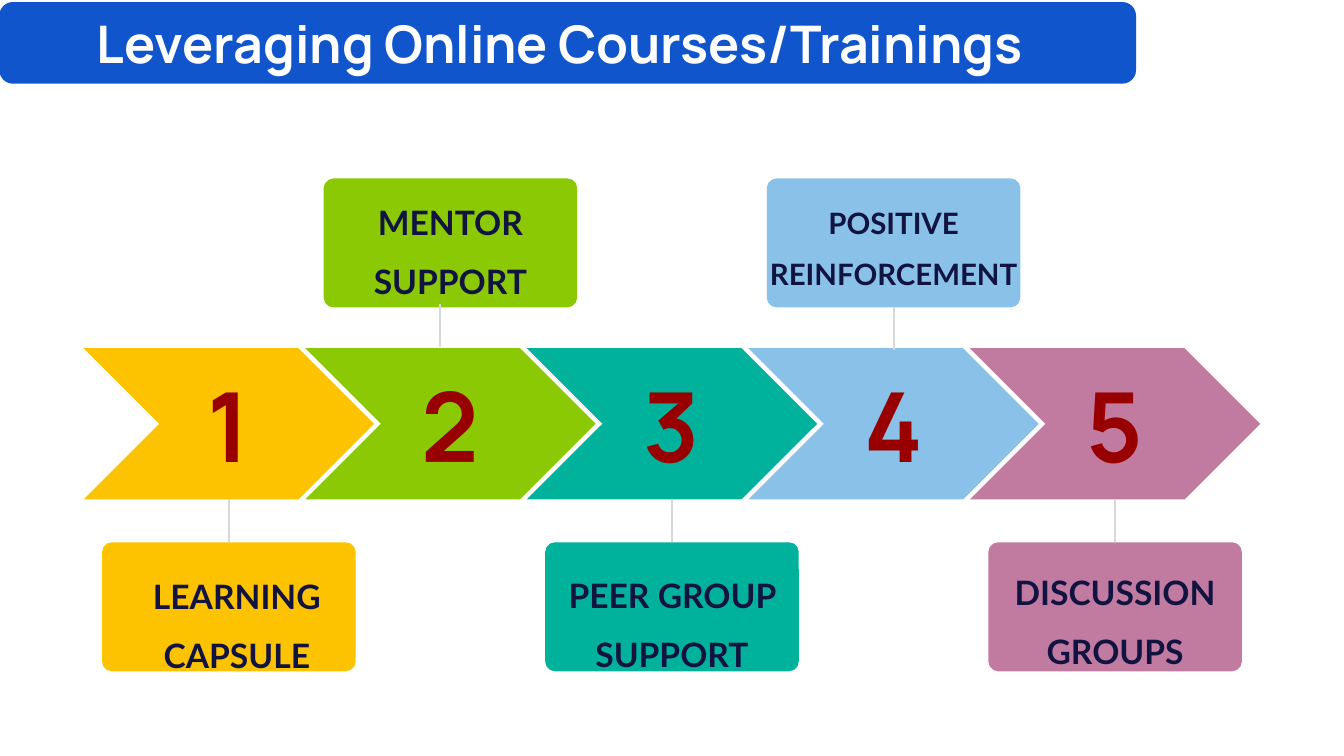
"""Build a five-step chevron slide on online courses."""
from dataclasses import dataclass
from pptx import Presentation
from pptx.dml.color import RGBColor
from pptx.enum.shapes import MSO_CONNECTOR, MSO_SHAPE
from pptx.enum.text import MSO_ANCHOR, MSO_AUTO_SIZE, PP_ALIGN
from pptx.oxml.ns import qn
from pptx.util import Inches, Pt


@dataclass(frozen=True)
class Theme:
    """Colours, fonts and type sizes."""
    banner: str = "1155CC"
    white: str = "FFFFFF"
    ink: str = "111340"
    digit: str = "980000"
    link: str = "D8D8D8"
    head: str = "Manrope"
    text: str = "Lato"
    title: int = 74
    number: int = 138
    label: int = 48
    small: int = 42


@dataclass(frozen=True)
class Step:
    """One stage: its card, label and link."""
    text: str
    fill: str
    top: float
    size: int = Theme.label
    wide: float = 5.03
    shift: float = 0
    bend: float = 0
    end: float = 10.76


THEME = Theme()
WIDE, HIGH = 26.66, 15
PITCH, FIRST = 4.395, 4.54
CARD, ARROW, LINK = (5.03, 2.56), (5.76, 3), 0.85
ABOVE, BELOW, BAND = 3.54, 10.76, 6.91
STEPS = [
    Step("LEARNING CAPSULE", "FDC300", 11.19, shift=0.16),
    Step("MENTOR SUPPORT", "8BC904", 3.77, bend=-0.21, end=6.89),
    Step("PEER GROUP SUPPORT", "00B29C", 11.17),
    Step("POSITIVE REINFORCEMENT", "89C1E8", 3.72, THEME.small, 5.57, end=6.94),
    Step("DISCUSSION GROUPS", "C27BA0", 11.11, wide=4.54),
]


def apply(obj, form):
    """Set each named value on an object."""
    for name, value in form.items():
        setattr(obj, name, value)


def mid(col):
    """Return the centre of a grid column."""
    return FIRST + PITCH * col


def box(x, y, wide, high):
    """Return a box that is centred on x."""
    return [Inches(n) for n in (x - wide / 2, y, wide, high)]


def block(slide, kind, place, fill, adj):
    """Add a plain filled shape."""
    shape = slide.shapes.add_shape(kind, *place)
    shape.shadow.inherit = False
    shape.adjustments[0] = adj
    shape.fill.solid()
    shape.fill.fore_color.rgb = RGBColor.from_string(fill)
    shape.line.fill.background()


def write(shape, text, face, size, tone, lead=1.0, fit=MSO_AUTO_SIZE.SHAPE_TO_FIT_TEXT):
    """Fill a shape with one bold centred paragraph."""
    frame = shape.text_frame
    frame.text = text
    apply(frame, {"word_wrap": True, "auto_size": fit,
                  "vertical_anchor": MSO_ANCHOR.MIDDLE})
    para = frame.paragraphs[0]
    apply(para, {"alignment": PP_ALIGN.CENTER, "line_spacing": lead})
    font = para.runs[0].font
    apply(font, {"name": face, "size": Pt(size), "bold": True})
    font.color.rgb = RGBColor.from_string(tone)


def link(slide, x, y):
    """Add an upright link that ends at y."""
    ends = [Inches(n) for n in (x, y, x, y - LINK)]
    line = slide.shapes.add_connector(MSO_CONNECTOR.STRAIGHT, *ends)
    line.line.color.rgb = RGBColor.from_string(THEME.link)
    line.line.width = Pt(3)
    props = line._element.spPr
    props.append(props.makeelement(qn("a:effectLst"), {}))


def stage(slide, col, step):
    """Draw one step in its column."""
    x = mid(col)
    row = ABOVE if col % 2 else BELOW
    block(slide, MSO_SHAPE.ROUNDED_RECTANGLE, box(x, row, *CARD), step.fill, 0.076)
    block(slide, MSO_SHAPE.CHEVRON, box(x, BAND, *ARROW), step.fill, 0.5)
    number = slide.shapes.add_textbox(*box(x, 7.2, 1.67, 2.42))
    write(number, str(col + 1), THEME.head, THEME.number, THEME.digit)
    label = slide.shapes.add_textbox(*box(x + step.shift, step.top, step.wide, 2.09))
    write(label, step.text, THEME.text, step.size, THEME.ink, 1.46)
    link(slide, x + step.bend, step.end)


def banner(slide):
    """Set the title on its banner."""
    x, y, wide, high = 11.26, 0.04, 22.55, 1.62
    block(slide, MSO_SHAPE.ROUNDED_RECTANGLE, box(x, y, wide, high), THEME.banner, 0.167)
    title = slide.shapes.title
    place = box(x - 0.15, y, wide, high)
    apply(title, dict(zip(("left", "top", "width", "height"), place)))
    write(title, "Leveraging Online Courses/Trainings", THEME.head, THEME.title,
          THEME.white, fit=MSO_AUTO_SIZE.NONE)
    slide.shapes._spTree.append(title._element)


def main():
    """Build and save the slide."""
    deck = Presentation()
    apply(deck, {"slide_width": Inches(WIDE), "slide_height": Inches(HIGH)})
    slide = deck.slides.add_slide(deck.slide_layouts[5])
    for col, step in enumerate(STEPS):
        stage(slide, col, step)
    banner(slide)
    deck.save("out.pptx")


if __name__ == "__main__":
    main()
